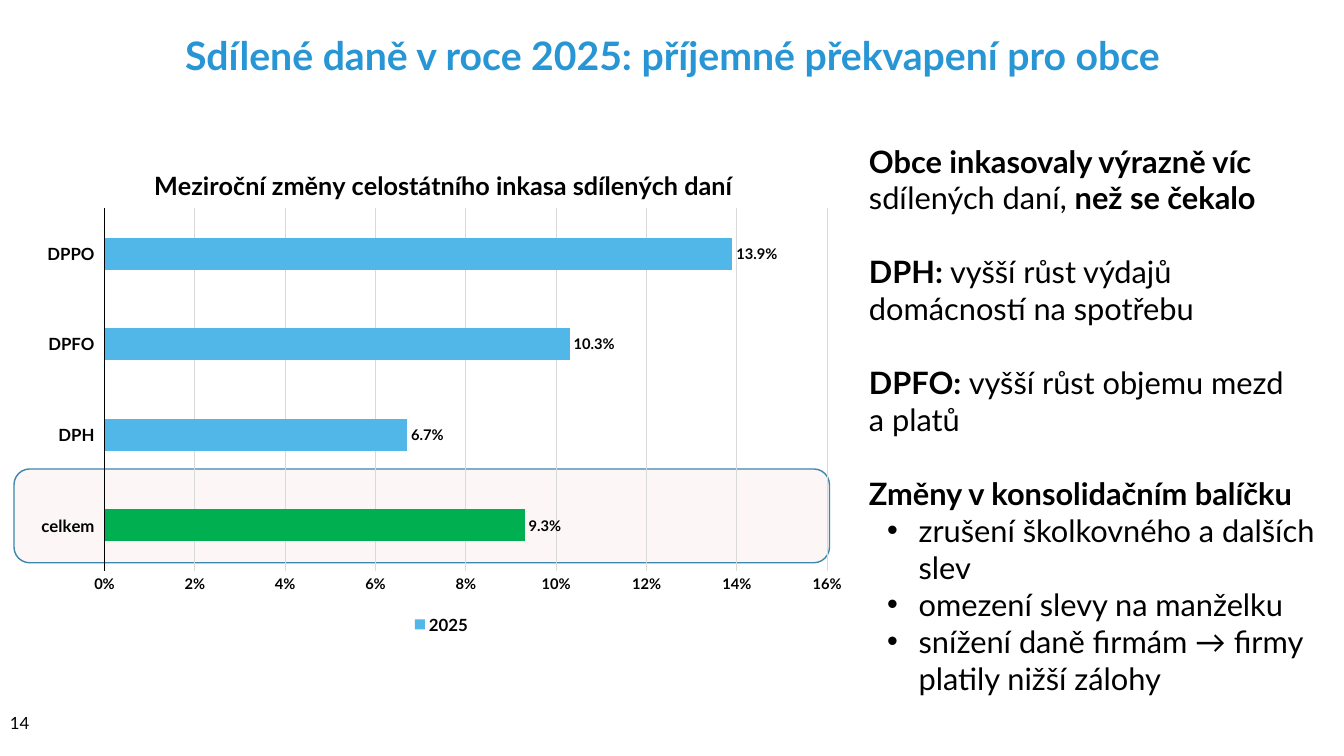
import pptx
import pptx.chart.data
import pptx.dml.color
import pptx.enum.chart
import pptx.enum.shapes
import pptx.enum.text
import pptx.oxml
import pptx.oxml.ns
import pptx.util
from lxml import etree

Pt = pptx.util.Pt
RGB = pptx.dml.color.RGBColor
qn = pptx.oxml.ns.qn

FONT = "Lato"
BLACK = RGB(0x00, 0x00, 0x00)
TITLE_BLUE = RGB(0x28, 0x96, 0xD4)
BAR_BLUE = RGB(0x51, 0xB7, 0xE9)
TOTAL_GREEN = RGB(0x00, 0xB0, 0x50)
GRID_GREY = RGB(0xD9, 0xD9, 0xD9)
BAND_PINK = RGB(0xF6, 0xB7, 0xBB)
BAND_LINE = RGB(0x3C, 0x87, 0xAC)

# Each paragraph: kind, then runs as (text, bold)
COMMENTARY = [
    ("lead", [("Obce inkasovaly výrazně víc ", True), ("sdílených daní, ", False),
              ("než se čekalo", True)]),
    ("lead", [("DPH:", True), (" vyšší růst výdajů domácností na spotřebu", False)]),
    ("lead", [("DPFO: ", True), ("vyšší růst objemu mezd a\u00a0platů", False)]),
    ("lead", [("Změny v\u00a0konsolidačním balíčku", True)]),
    ("bullet", [("zrušení školkovného a dalších slev", False)]),
    ("bullet", [("omezení slevy na manželku", False)]),
    ("bullet", [("snížení daně firmám → firmy platily nižší zálohy", False)]),
]


def set_font(font, size, color=BLACK, bold=False):
    font.name = FONT
    font.size = Pt(size)
    font.bold = bold
    font.color.rgb = color


def add_text(p, text, size, color=BLACK, bold=False, align=None):
    r = p.add_run()
    r.text = text
    set_font(r.font, size, color, bold)
    if align is not None:
        p.alignment = align


def place(sp, left, top, width, height):
    sp.left, sp.top, sp.width, sp.height = Pt(left), Pt(top), Pt(width), Pt(height)


def set_frame(sp, anchor):
    tf = sp.text_frame
    tf.word_wrap = True
    tf.auto_size = pptx.enum.text.MSO_AUTO_SIZE.NONE
    tf.vertical_anchor = anchor
    return tf


def set_bullet(p, char=None):
    pPr = p._p.get_or_add_pPr()
    pPr.set("marL", str(Pt(35.5) if char else 0))
    pPr.set("indent", str(Pt(-22.5) if char else 0))
    if char:
        etree.SubElement(pPr, qn("a:buFont")).set("typeface", "Arial")
        etree.SubElement(pPr, qn("a:buChar")).set("char", char)
    else:
        etree.SubElement(pPr, qn("a:buNone"))


def add_title(s, text):
    sp = s.shapes.title
    place(sp, 26, 0, 908.5, 78)
    tf = set_frame(sp, pptx.enum.text.MSO_ANCHOR.MIDDLE)
    add_text(tf.paragraphs[0], text, 28, TITLE_BLUE, True,
             pptx.enum.text.PP_ALIGN.CENTER)


def add_commentary(s, paragraphs):
    sp = s.placeholders[1]
    place(sp, 613.5, 98, 346.5, 407)
    tf = set_frame(sp, pptx.enum.text.MSO_ANCHOR.TOP)
    for i, (kind, runs) in enumerate(paragraphs):
        p = tf.add_paragraph() if i else tf.paragraphs[0]
        set_bullet(p, "•" if kind == "bullet" else None)
        p.space_before = Pt(26.4 if i and kind == "lead" else 0)
        for text, bold in runs:
            add_text(p, text, 22, bold=bold)


def add_page_number(s, text):
    sp = s.shapes.add_textbox(Pt(0), Pt(500.5), Pt(34.5), Pt(31))
    tf = set_frame(sp, pptx.enum.text.MSO_ANCHOR.MIDDLE)
    add_text(tf.paragraphs[0], text, 12)


def add_total_band(s):
    sp = s.shapes.add_shape(pptx.enum.shapes.MSO_SHAPE.ROUNDED_RECTANGLE,
                            Pt(10), Pt(335), Pt(582.5), Pt(67))
    sp.shadow.inherit = False
    sp.fill.solid()
    sp.fill.fore_color.rgb = BAND_PINK
    color = sp.fill._xPr.find(qn("a:solidFill"))[0]
    etree.SubElement(color, qn("a:alpha")).set("val", "12000")
    sp.line.color.rgb = BAND_LINE
    sp.line.width = Pt(1)


def manual_layout(target, x, y, **size):
    """Fix a chart part at fractions of the chart area."""
    layout = target.find(qn("c:layout"))
    if layout is None:
        layout = etree.Element(qn("c:layout"))
        tx = target.find(qn("c:tx"))
        if tx is not None:
            tx.addnext(layout)
        else:
            target.insert(0, layout)
    for child in list(layout):
        layout.remove(child)
    manual = etree.SubElement(layout, qn("c:manualLayout"))
    values = {"xMode": "edge", "yMode": "edge", "x": x, "y": y, **size}
    if size:
        values = {"layoutTarget": "inner", **values}
    for tag, value in values.items():
        etree.SubElement(manual, qn("c:" + tag)).set("val", str(value))


def no_fill():
    spPr = etree.Element(qn("c:spPr"))
    etree.SubElement(spPr, qn("a:noFill"))
    line = etree.SubElement(spPr, qn("a:ln"))
    etree.SubElement(line, qn("a:noFill"))
    return spPr


def format_axes(chart):
    none = pptx.enum.chart.XL_TICK_MARK.NONE
    cat, val = chart.category_axis, chart.value_axis
    for axis, size in ((cat, 12), (val, 10.5)):
        axis.major_tick_mark = axis.minor_tick_mark = none
        set_font(axis.tick_labels.font, size, bold=True)
    cat.tick_label_position = pptx.enum.chart.XL_TICK_LABEL_POSITION.LOW
    cat.has_major_gridlines = False
    cat.format.line.color.rgb = BLACK
    cat.format.line.width = Pt(1)
    val.minimum_scale, val.maximum_scale, val.major_unit = 0, 0.16, 0.02
    val.tick_labels.number_format = "0%"
    val.tick_labels.number_format_is_linked = False
    val.format.line.fill.background()
    val.major_gridlines.format.line.color.rgb = GRID_GREY
    val.major_gridlines.format.line.width = Pt(0.75)


def add_tax_chart(s):
    data = pptx.chart.data.CategoryChartData(number_format="0.0%")
    data.categories = ["celkem", "DPH", "DPFO", "DPPO"]
    data.add_series("2025", [0.093, 0.067, 0.103, 0.139])
    chart = s.shapes.add_chart(pptx.enum.chart.XL_CHART_TYPE.BAR_CLUSTERED,
                               Pt(17.5), Pt(98), Pt(595.5), Pt(358), data).chart
    set_font(chart.font, 10)
    format_axes(chart)

    # Title and legend
    chart.has_title = True
    add_text(chart.chart_title.text_frame.paragraphs[0],
             "Meziroční změny celostátního inkasa sdílených daní", 18, bold=True)
    chart.chart_title.include_in_layout = False
    chart.has_legend = True
    chart.legend.position = pptx.enum.chart.XL_LEGEND_POSITION.BOTTOM
    chart.legend.include_in_layout = False
    set_font(chart.legend.font, 12, bold=True)

    # Bars and their labels
    plot = chart.plots[0]
    plot.gap_width = 182
    plot.vary_by_categories = False
    bars = plot.series[0]
    for part, color in ((bars, BAR_BLUE), (bars.points[0], TOTAL_GREEN)):
        part.format.fill.solid()
        part.format.fill.fore_color.rgb = color
    labels = bars.data_labels
    labels.show_value = True
    labels.position = pptx.enum.chart.XL_LABEL_POSITION.OUTSIDE_END
    labels.number_format = "0.0%"
    labels.number_format_is_linked = False
    set_font(labels.font, 10.5, bold=True)

    # See-through background and fixed plot position
    body = chart.element.find(qn("c:chart"))
    body.addnext(no_fill())
    plot_area = body.find(qn("c:plotArea"))
    plot_area.append(no_fill())
    manual_layout(plot_area, 0.096, 0.142, w=0.867, h=0.723)
    manual_layout(body.find(qn("c:title")), 0.15, 0.05)


def main():
    prs = pptx.Presentation()
    prs.slide_width, prs.slide_height = Pt(960), Pt(540)
    s = prs.slides.add_slide(prs.slide_layouts[1])
    add_title(s, "Sdílené daně v roce 2025: příjemné překvapení pro obce")
    add_page_number(s, "14")
    add_commentary(s, COMMENTARY)
    add_total_band(s)
    add_tax_chart(s)
    prs.save("out.pptx")


if __name__ == "__main__":
    main()
